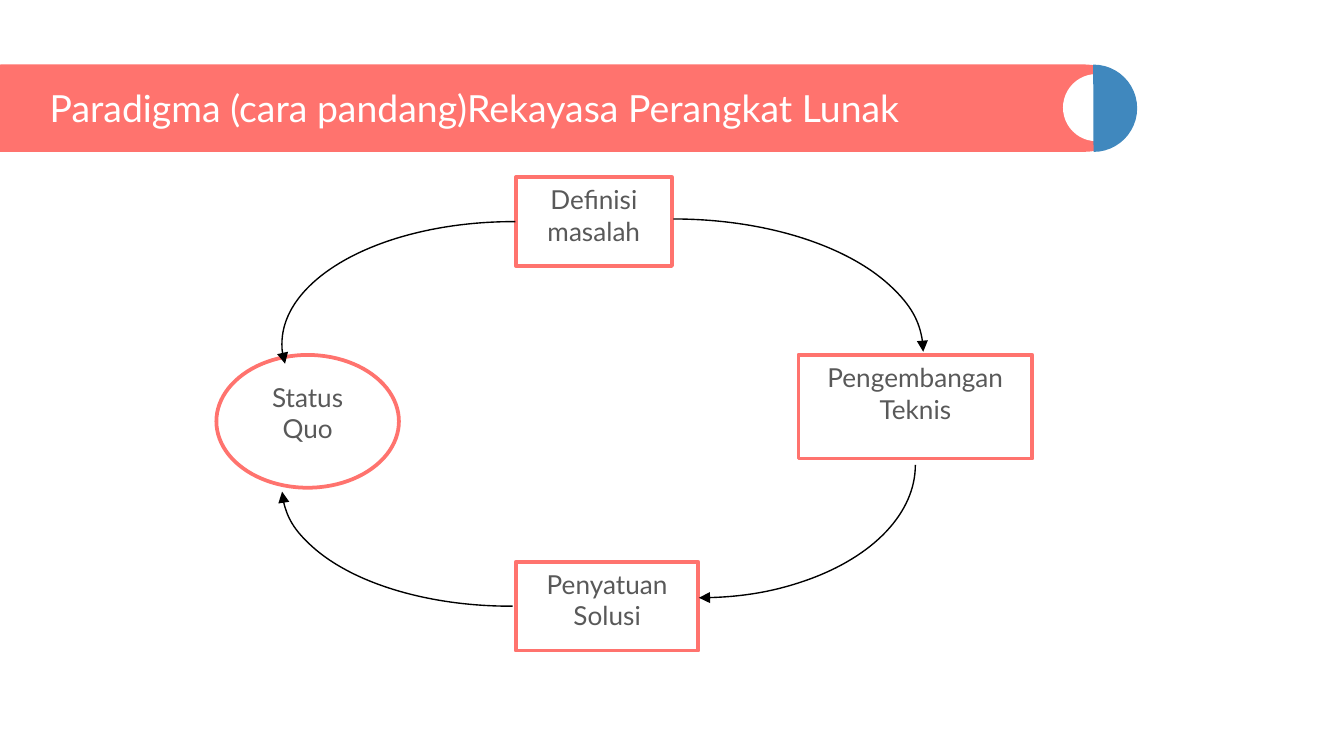
import pptx
import pptx.dml.color
import pptx.enum.shapes
import pptx.enum.text
import pptx.oxml.ns
import pptx.util
from dataclasses import dataclass
from lxml import etree

Cm = pptx.util.Cm
Pt = pptx.util.Pt
Kind = pptx.enum.shapes.MSO_SHAPE
Align = pptx.enum.text.PP_ALIGN
Anchor = pptx.enum.text.MSO_ANCHOR


@dataclass(frozen=True)
class Theme:
    font: str = "Lato"
    coral: str = "FF736E"
    blue: str = "4088BE"
    white: str = "FFFFFF"
    black: str = "000000"
    grey: str = "595959"
    title_size: float = 20
    label_size: float = 14
    border: float = 2
    arrow: float = 0.75


theme = Theme()


def add_shape(kind, area, fill=None, line=None, width=0):
    shape = page.shapes.add_shape(kind, *[Cm(length) for length in area])
    shape.shadow.inherit = False
    if fill:
        shape.fill.solid()
        shape.fill.fore_color.rgb = pptx.dml.color.RGBColor.from_string(fill)
    else:
        shape.fill.background()
    if line:
        shape.line.color.rgb = pptx.dml.color.RGBColor.from_string(line)
        shape.line.width = Pt(width)
    else:
        shape.line.fill.background()
    return shape


def write(para, text, size, color, align):
    para.alignment = align
    span = para.add_run()
    span.text = text
    span.font.name = theme.font
    span.font.size = Pt(size)
    span.font.color.rgb = pptx.dml.color.RGBColor.from_string(color)


deck = pptx.Presentation()
deck.slide_width, deck.slide_height = Cm(25.4), Cm(14.29)
page = deck.slides.add_slide(deck.slide_layouts[5])

# Banner with a round end
banner = add_shape(Kind.ROUNDED_RECTANGLE, (-0.81, 1.22, 22.15, 1.65), theme.coral)
banner.adjustments[0] = 0.5
add_shape(Kind.OVAL, (20.09, 1.4, 1.27, 1.27), theme.white)
half_disc = add_shape(Kind.PIE, (19.84, 1.22, 1.65, 1.65), theme.blue)
half_disc.rotation = 180
half_disc.adjustments[0] = 53.67
half_disc.adjustments[1] = 162

# Title, brought in front of the banner
title = page.shapes.title
title.left, title.top, title.width, title.height = Cm(0.69), Cm(1.52), Cm(18.97), Cm(1.04)
page.shapes._spTree.append(title._element)
frame = title.text_frame
frame.auto_size = pptx.enum.text.MSO_AUTO_SIZE.NONE
frame.word_wrap = True
frame.vertical_anchor = Anchor.MIDDLE
frame.margin_left = frame.margin_right = frame.margin_top = frame.margin_bottom = Cm(0.25)
write(frame.paragraphs[0], "Paradigma (cara pandang)Rekayasa Perangkat Lunak",
      theme.title_size, theme.white, Align.LEFT)

# Stages of the cycle
stages = [
    ("Definisi masalah", Kind.RECTANGLE, (9.75, 3.35, 2.95, 1.68)),
    ("Penyatuan Solusi", Kind.RECTANGLE, (9.75, 10.62, 3.45, 1.68)),
    ("Pengembangan Teknis", Kind.RECTANGLE, (15.09, 6.71, 4.42, 1.96)),
    ("Status Quo", Kind.OVAL, (4.09, 6.71, 3.45, 2.51)),
]
for label, kind, area in stages:
    box = add_shape(kind, area, theme.white, theme.coral, theme.border)
    box.text_frame.word_wrap = True
    box.text_frame.vertical_anchor = Anchor.TOP
    write(box.text_frame.paragraphs[0], label, theme.label_size, theme.grey, Align.CENTER)

# Curved arrows: centre, radii, start and end angle in degrees, end with the arrowhead
arrows = [
    (12.73, 6.65, 4.72, 2.51, 270, 0, "tailEnd"),
    (13.21, 8.79, 4.09, 2.51, 0, 90, "tailEnd"),
    (9.7, 6.5, 4.37, 2.31, 175, 271, "headEnd"),
    (9.65, 9.22, 4.32, 2.24, 89, 179, "tailEnd"),
]
for x, y, radius_x, radius_y, start, end, tip in arrows:
    area = (x - radius_x, y - radius_y, 2 * radius_x, 2 * radius_y)
    arc = add_shape(Kind.ARC, area, line=theme.black, width=theme.arrow)
    # An angle adjustment counts 0.6 per degree
    arc.adjustments[0] = start * 0.6
    arc.adjustments[1] = end * 0.6
    outline = arc.line._get_or_add_ln()
    etree.SubElement(outline, pptx.oxml.ns.qn("a:" + tip), type="triangle")

deck.save("out.pptx")
